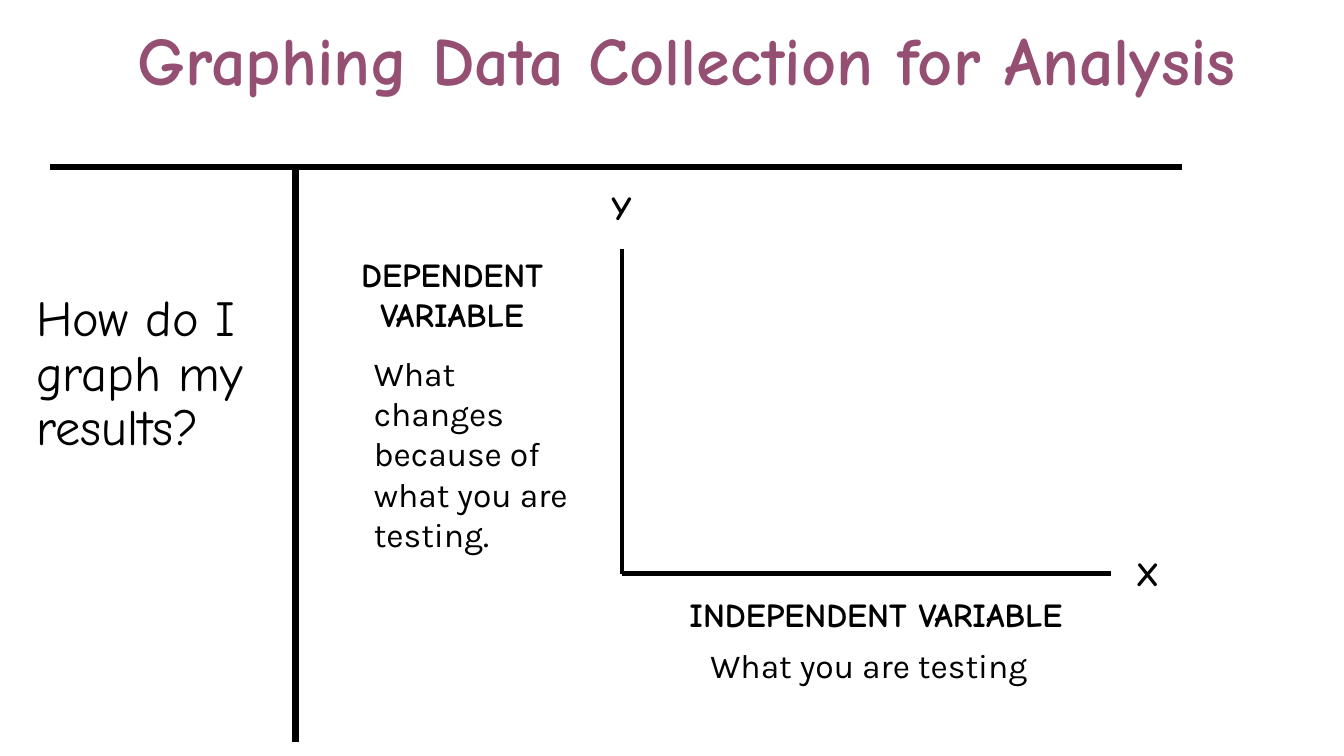
from lxml import etree
from pptx import Presentation
from pptx.dml.color import RGBColor
from pptx.enum import shapes, text
from pptx.oxml.ns import qn
from pptx.util import Pt

BLACK = RGBColor(0x00, 0x00, 0x00)
PLUM = RGBColor(0x95, 0x4F, 0x72)
LEFT, CENTER = text.PP_ALIGN.LEFT, text.PP_ALIGN.CENTER
TOP, MIDDLE = text.MSO_ANCHOR.TOP, text.MSO_ANCHOR.MIDDLE

# Corner points of the page rules and of the graph axes
RULE_LEFT, RULE_RIGHT, RULE_Y = 36, 844.5, 119.5
DIVIDER_X, DIVIDER_BOTTOM = 211, 530
ORIGIN_X, ORIGIN_Y = 444.2, 409.7
AXIS_TOP, AXIS_RIGHT = 177.8, 793.4

STYLES = {
    "title": {
        "font": {"name": "Comic Neue", "size": Pt(48.6), "bold": True},
        "color": PLUM,
        "paragraph": {"alignment": CENTER, "line_spacing": 0.9},
        "anchor": MIDDLE,
    },
    "question": {
        "font": {"name": "Comic Neue", "size": Pt(36), "bold": False},
        "color": BLACK,
        "paragraph": {"alignment": LEFT, "line_spacing": 0.9, "space_before": Pt(10)},
        "anchor": TOP,
    },
    "label": {
        "font": {"name": "Comic Neue", "size": Pt(24), "bold": True},
        "color": BLACK,
        "paragraph": {"alignment": CENTER},
        "anchor": TOP,
    },
    "meaning": {
        "font": {"name": "Karla", "size": Pt(24), "bold": False},
        "color": BLACK,
        "paragraph": {"alignment": LEFT},
        "anchor": TOP,
    },
}

# Wording, style, (left, top, width, height)
TEXTS = [
    ("Graphing Data Collection for Analysis", "title", (36, 0, 908.6, 90)),
    ("How do I graph my results?", "question", (18.7, 205.9, 194.4, 324)),
    ("INDEPENDENT VARIABLE", "label", (ORIGIN_X, 420.5, 362.9, 36)),
    ("DEPENDENT VARIABLE", "label", (238.3, 177.8, 169.2, 65.5)),
    ("Y", "label", (418.3, 130.3, 51.1, 36)),
    ("X", "label", (794.2, 391.7, 51.1, 36)),
    ("What changes because of what you are testing.", "meaning", (259.9, 248.4, 162, 152.6)),
    ("What you are testing", "meaning", (500.4, 457.2, 306, 36.7)),
]

# Start, end, width
LINES = [
    ((RULE_LEFT, RULE_Y), (RULE_RIGHT, RULE_Y), 4.5),
    ((DIVIDER_X, RULE_Y), (DIVIDER_X, DIVIDER_BOTTOM), 4.5),
    ((ORIGIN_X, AXIS_TOP), (ORIGIN_X, ORIGIN_Y), 3),
    ((AXIS_RIGHT, ORIGIN_Y), (ORIGIN_X, ORIGIN_Y), 3),
]


def set_attributes(target, values):
    for name, value in values.items():
        setattr(target, name, value)


def add_text(slide, wording, style, box):
    frame = slide.shapes.add_textbox(*map(Pt, box)).text_frame
    set_attributes(frame, {"word_wrap": True, "vertical_anchor": style["anchor"]})
    paragraph = frame.paragraphs[0]
    set_attributes(paragraph, style["paragraph"])
    run = paragraph.add_run()
    run.text = wording
    set_attributes(run.font, style["font"])
    run.font.color.rgb = style["color"]


def add_line(slide, start, end, width):
    connector = slide.shapes.add_connector(
        shapes.MSO_CONNECTOR.STRAIGHT, *map(Pt, start + end)
    )
    connector.line.color.rgb = BLACK
    connector.line.width = Pt(width)
    etree.SubElement(connector._element.spPr, qn("a:effectLst"))


def main():
    presentation = Presentation()
    set_attributes(presentation, {"slide_width": Pt(960), "slide_height": Pt(540)})
    slide = presentation.slides.add_slide(presentation.slide_layouts[6])
    for line in LINES:
        add_line(slide, *line)
    for wording, style_name, box in TEXTS:
        add_text(slide, wording, STYLES[style_name], box)
    presentation.save("out.pptx")


if __name__ == "__main__":
    main()
